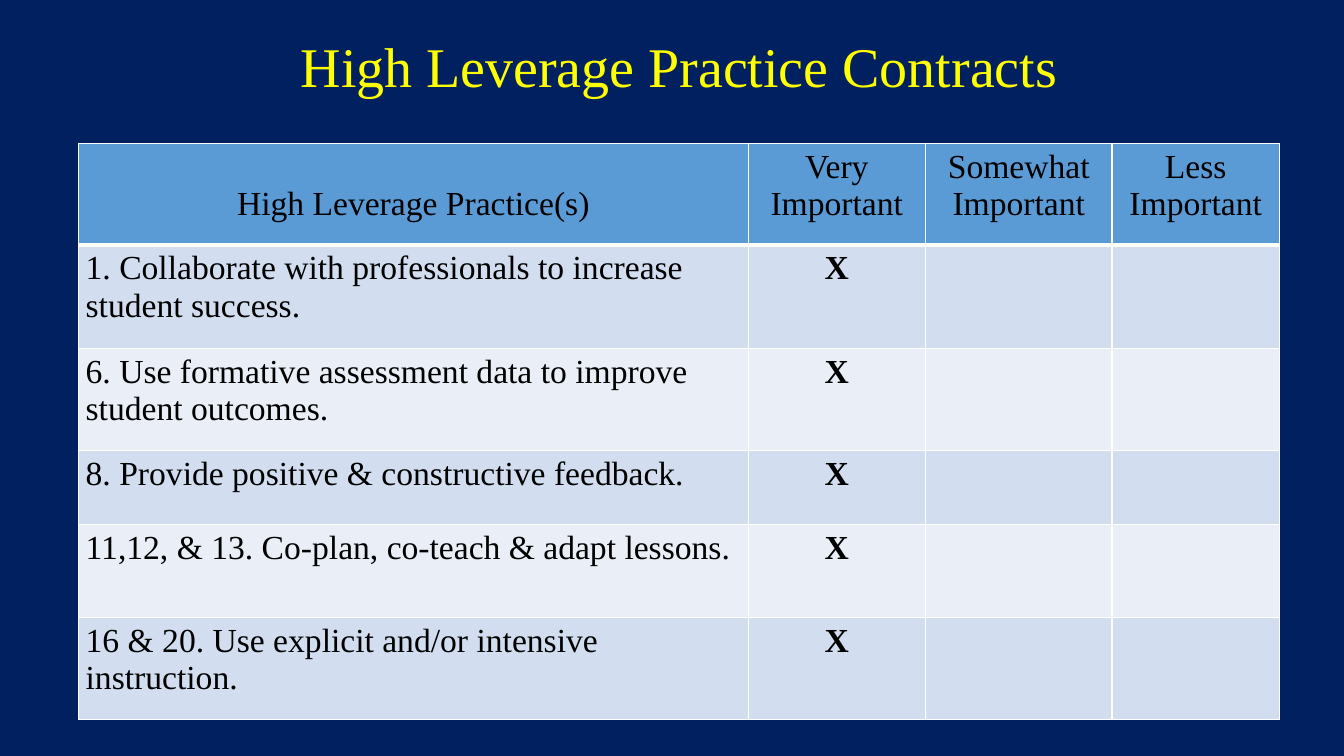
from dataclasses import dataclass

from lxml import etree
from pptx import Presentation
from pptx.dml.color import RGBColor
from pptx.enum import text
from pptx.oxml import ns
from pptx.util import Inches, Pt


@dataclass(frozen=True)
class Theme:
    font: str = "Times New Roman"
    title_size: int = 40
    table_size: int = 24
    background: str = "002060"
    title: str = "FFFF00"
    ink: str = "000000"
    border: str = "FFFFFF"
    header: str = "5B9BD5"
    bands: tuple = ("D2DEEF", "EAEFF7")


THEME = Theme()
TITLE_BOX = (0.78, 0.26, 11.91, 0.85)
TABLE_BOX = (0.78, 1.42, 11.91, 5.72)
COLUMN_WIDTHS = (6.64, 1.76, 1.85, 1.66)
ROW_HEIGHTS = (1.01, 1.03, 1.01, 0.73, 0.93, 1.01)
HEADERS = ("High Leverage Practice(s)", "Very Important",
           "Somewhat Important", "Less Important")
PRACTICES = (
    "1. Collaborate with professionals to increase student success.",
    "6. Use formative assessment data to improve student outcomes.",
    "8. Provide positive & constructive feedback.",
    "11,12, & 13. Co-plan, co-teach & adapt lessons.",
    "16 & 20. Use explicit and/or intensive instruction.",
)


def style_paragraph(paragraph, size, color, centered, bold=False):
    paragraph.alignment = text.PP_ALIGN.CENTER if centered else text.PP_ALIGN.LEFT
    paragraph.font.name = THEME.font
    paragraph.font.size = Pt(size)
    paragraph.font.bold = bold
    paragraph.font.color.rgb = RGBColor.from_string(color)


def add_title(slide, box, wording):
    title = slide.shapes.title
    title.left, title.top, title.width, title.height = map(Inches, box)
    frame = title.text_frame
    frame.text = wording
    frame.word_wrap = True
    frame.vertical_anchor = text.MSO_ANCHOR.MIDDLE
    paragraph = frame.paragraphs[0]
    paragraph.line_spacing = 0.9
    style_paragraph(paragraph, THEME.title_size, THEME.title, centered=True)


def add_borders(cell, bottom_width):
    properties = cell._tc.get_or_add_tcPr()
    for side, width in (("L", 1), ("R", 1), ("T", 1), ("B", bottom_width)):
        line = etree.SubElement(properties, ns.qn(f"a:ln{side}"), w=str(Pt(width)))
        fill = etree.SubElement(line, ns.qn("a:solidFill"))
        etree.SubElement(fill, ns.qn("a:srgbClr"), val=THEME.border)


def format_cell(cell, wording, fill, centered, bold=False, bottom_width=1):
    add_borders(cell, bottom_width)
    cell.fill.solid()
    cell.fill.fore_color.rgb = RGBColor.from_string(fill)
    cell.margin_left = cell.margin_right = Inches(0.07)
    cell.margin_top = cell.margin_bottom = Inches(0.05)
    cell.text = wording
    style_paragraph(cell.text_frame.paragraphs[0], THEME.table_size, THEME.ink,
                    centered, bold)


def add_practice_table(slide, box):
    rows = [(practice, "X", "", "") for practice in PRACTICES]
    table = slide.shapes.add_table(len(rows) + 1, len(HEADERS),
                                   *map(Inches, box)).table
    for column, width in zip(table.columns, COLUMN_WIDTHS):
        column.width = Inches(width)
    for row, height in zip(table.rows, ROW_HEIGHTS):
        row.height = Inches(height)

    for column, wording in enumerate(HEADERS):
        format_cell(table.cell(0, column), wording, THEME.header,
                    centered=True, bottom_width=3)
    # The one-line heading sits level with the second line of the others.
    table.cell(0, 0).margin_top = Inches(0.42)

    for index, row in enumerate(rows):
        for column, wording in enumerate(row):
            format_cell(table.cell(index + 1, column), wording,
                        THEME.bands[index % 2], centered=column > 0,
                        bold=column > 0)


def main():
    presentation = Presentation()
    presentation.slide_width = Inches(13.33)
    presentation.slide_height = Inches(7.5)
    slide = presentation.slides.add_slide(
        presentation.slide_layouts.get_by_name("Title Only"))
    slide.background.fill.solid()
    slide.background.fill.fore_color.rgb = RGBColor.from_string(THEME.background)
    add_title(slide, TITLE_BOX, "High Leverage Practice Contracts")
    add_practice_table(slide, TABLE_BOX)
    presentation.save("out.pptx")


if __name__ == "__main__":
    main()
